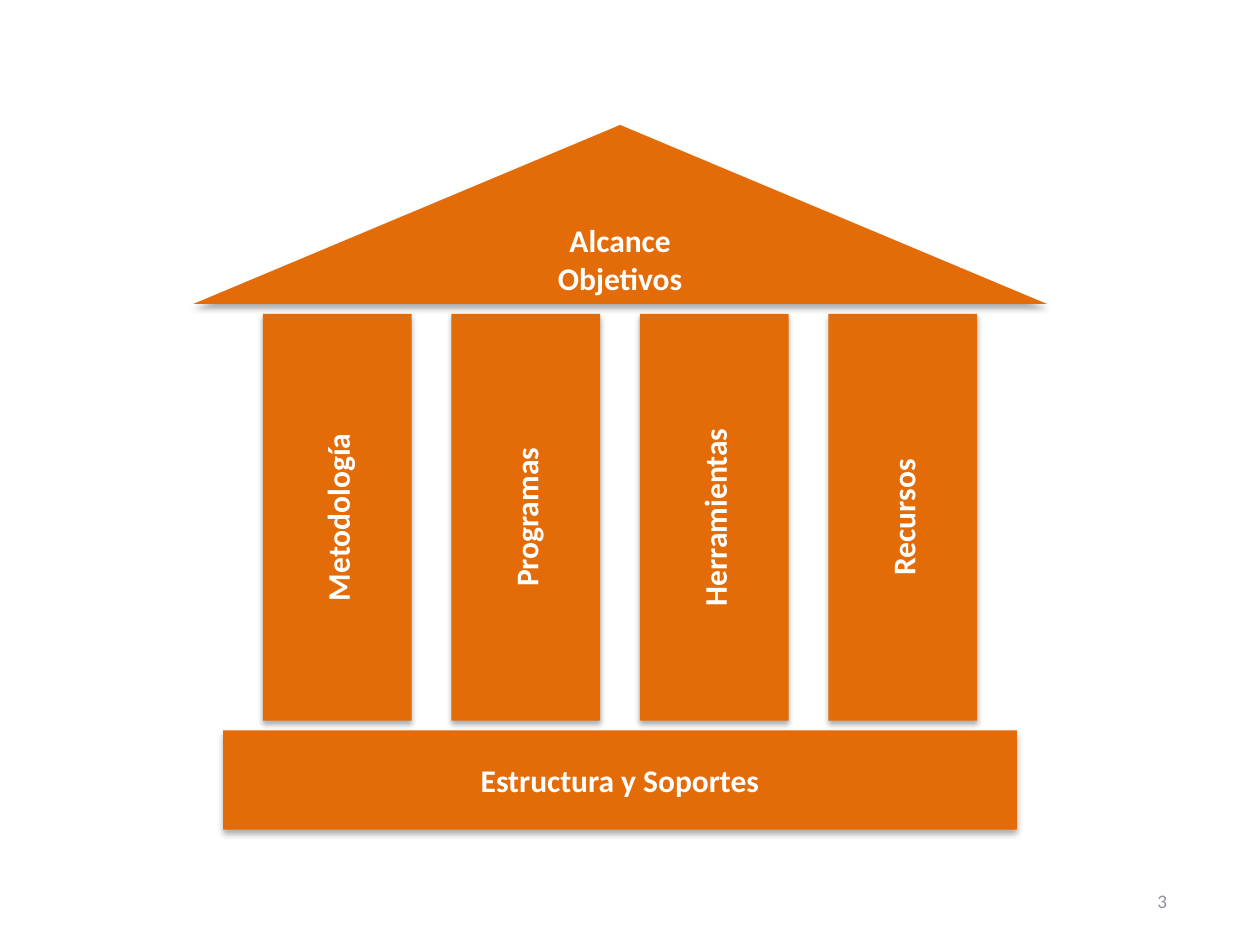
from dataclasses import dataclass

from lxml.etree import SubElement
from pptx import Presentation
from pptx.dml.color import RGBColor
from pptx.enum.shapes import MSO_SHAPE
from pptx.enum.text import MSO_ANCHOR, PP_ALIGN
from pptx.oxml.ns import qn
from pptx.shapes.autoshape import Shape
from pptx.shapes.shapetree import GroupShapes
from pptx.text.text import TextFrame
from pptx.util import Pt

COLORS = {"orange": "E36C09", "white": "FFFFFF", "gray": "8E939E", "shadow": "000000"}
FONT = "Calibri"

COLUMN_LABELS = ["Metodología", "Programas", "Herramientas", "Recursos"]
COLUMN_LEFT = 150.2
COLUMN_PITCH = 107.7
COLUMN_TOP = 179.4
COLUMN_WIDTH = 85
COLUMN_HEIGHT = 232.4


@dataclass
class Block:
    lines: list[str]
    left: float
    top: float
    width: float
    height: float
    kind: MSO_SHAPE = MSO_SHAPE.RECTANGLE
    vertical: bool = False


def write_text(frame: TextFrame, lines: list[str], *, size: float, color: str,
               bold: bool = False) -> None:
    frame.word_wrap = True
    frame.vertical_anchor = MSO_ANCHOR.MIDDLE
    for index, line in enumerate(lines):
        para = frame.add_paragraph() if index else frame.paragraphs[0]
        para.alignment = PP_ALIGN.CENTER
        span = para.add_run()
        span.text = line
        span.font.name = FONT
        span.font.size = Pt(size)
        span.font.bold = bold
        span.font.color.rgb = RGBColor.from_string(COLORS[color])


def add_soft_shadow(shape: Shape) -> None:
    shape.shadow.inherit = False
    effects = shape._element.spPr.find(qn("a:effectLst"))
    shadow = SubElement(effects, qn("a:outerShdw"), blurRad=str(Pt(3.5)),
                        dist=str(Pt(2.2)), dir="5400000", rotWithShape="0")
    color = SubElement(shadow, qn("a:srgbClr"), val=COLORS["shadow"])
    SubElement(color, qn("a:alpha"), val="32000")


def draw_block(shapes: GroupShapes, block: Block) -> None:
    shape = shapes.add_shape(block.kind, Pt(block.left), Pt(block.top),
                             Pt(block.width), Pt(block.height))
    shape.fill.solid()
    shape.fill.fore_color.rgb = RGBColor.from_string(COLORS["orange"])
    shape.line.fill.background()
    add_soft_shadow(shape)
    write_text(shape.text_frame, block.lines, size=18, color="white", bold=True)
    if block.vertical:
        shape.text_frame._txBody.bodyPr.set("vert", "vert270")


def main() -> None:
    deck = Presentation()
    deck.slide_width = Pt(720)
    deck.slide_height = Pt(540)
    page = deck.slides.add_slide(deck.slide_layouts[6])

    number = page.shapes.add_textbox(Pt(641.5), Pt(500.6), Pt(45.4), Pt(28.8))
    write_text(number.text_frame, ["3"], size=11, color="gray")

    roof = Block(["Alcance", "Objetivos"], 110.7, 71.4, 487.4, 102.2,
                 MSO_SHAPE.ISOSCELES_TRIANGLE)
    columns = [
        Block([label], COLUMN_LEFT + index * COLUMN_PITCH, COLUMN_TOP,
              COLUMN_WIDTH, COLUMN_HEIGHT, vertical=True)
        for index, label in enumerate(COLUMN_LABELS)
    ]
    base = Block(["Estructura y Soportes"], 127.5, 417.4, 453.6, 56.7)

    temple = page.shapes.add_group_shape()
    for block in [roof, *columns, base]:
        draw_block(temple.shapes, block)

    deck.save("out.pptx")


if __name__ == "__main__":
    main()
